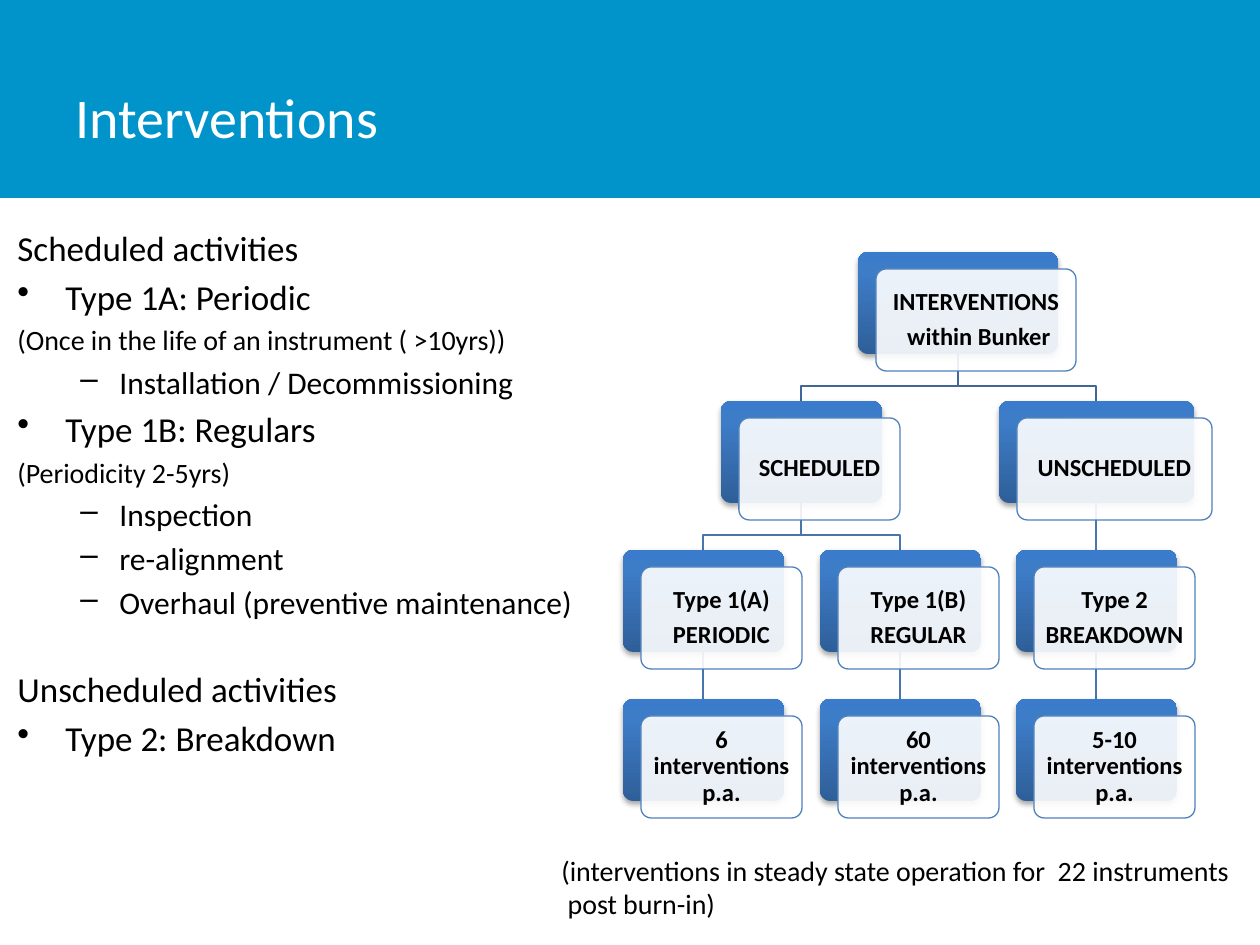
"""Build the Interventions slide with its activity list and breakdown tree."""
from copy import deepcopy
from dataclasses import dataclass
from typing import Optional

from lxml import etree
from pptx import Presentation
from pptx import util as u
from pptx.dml.color import RGBColor
from pptx.enum import shapes, text
from pptx.oxml.ns import qn

EMU_PER_PX = 914400 / 126
FONT = "Calibri"
BLACK = RGBColor(0x00, 0x00, 0x00)
WHITE = RGBColor(0xFF, 0xFF, 0xFF)
BANNER_BLUE = RGBColor(0x00, 0x94, 0xCA)
OUTLINE_BLUE = RGBColor(0x4F, 0x81, 0xBD)
UPPER_LINK = RGBColor(0x3F, 0x67, 0x97)
LOWER_LINK = RGBColor(0x48, 0x75, 0xAC)
CARD_GRADIENT = (
    (0, RGBColor(0x2F, 0x5F, 0x99)),
    (0.8, RGBColor(0x3D, 0x7C, 0xC7)),
    (1, RGBColor(0x3A, 0x7C, 0xCB)),
)

TREE_TOP, LEVEL_PITCH, CARD_HEIGHT = 252, 149, 102
FRONT_DX, FRONT_DY, TEXT_MARGIN, BEND_DROP = 18, 17, 3, 32


@dataclass(frozen=True)
class Item:
    wording: str
    size: int
    bullet: str = ""
    margin: int = 0
    hanging: int = 0
    before: Optional[float] = None


@dataclass(frozen=True)
class Card:
    lines: tuple[str, ...]
    level: int
    left: int
    width: int = 161
    parent: Optional["Card"] = None

    @property
    def top(self) -> int:
        return TREE_TOP + self.level * LEVEL_PITCH

    @property
    def centre(self) -> int:
        return self.left + self.width // 2


def px(length: float) -> u.Emu:
    """Turn pixels into EMU."""
    return u.Emu(round(length * EMU_PER_PX))


def heading(wording: str) -> Item:
    return Item(wording, 20)


def activity(wording: str) -> Item:
    return Item(wording, 20, "•", 48, 48)


def remark(wording: str) -> Item:
    return Item(wording, 16)


def task(wording: str) -> Item:
    return Item(wording, 18, "–", 102, 39)


ITEMS = (
    heading("Scheduled activities"),
    activity("Type 1A: Periodic"),
    remark("(Once in the life of an instrument ( >10yrs))"),
    task("Installation / Decommissioning"),
    activity("Type 1B: Regulars"),
    remark("(Periodicity 2-5yrs)"),
    task("Inspection"),
    task("re-alignment"),
    task("Overhaul (preventive maintenance)"),
    Item("Unscheduled activities", 20, before=26.7),
    activity("Type 2: Breakdown"),
)

ROOT = Card(("INTERVENTIONS", " within Bunker"), 0, 858, 200)
SCHEDULED = Card(("SCHEDULED",), 1, 721, parent=ROOT)
UNSCHEDULED = Card(("UNSCHEDULED",), 1, 999, 195, ROOT)
PERIODIC = Card(("Type 1(A)", "PERIODIC"), 2, 623, parent=SCHEDULED)
REGULAR = Card(("Type 1(B)", "REGULAR"), 2, 820, parent=SCHEDULED)
BREAKDOWN = Card(("Type 2", "BREAKDOWN"), 2, 1016, parent=UNSCHEDULED)
COUNTS = tuple(
    Card((f"{count} interventions p.a.",), 3, kind.left, parent=kind)
    for count, kind in (("6", PERIODIC), ("60", REGULAR), ("5-10", BREAKDOWN))
)
CARDS = (ROOT, SCHEDULED, PERIODIC, COUNTS[0], REGULAR, COUNTS[1],
         UNSCHEDULED, BREAKDOWN, COUNTS[2])


def add_text(canvas, frame: tuple[int, ...], lines, size: int, color=BLACK, bold=False):
    """Add a wrapping text box and style each of its paragraphs."""
    box = canvas.add_textbox(*map(px, frame))
    box.text_frame.word_wrap = True
    box.text_frame.text = "\n".join(lines)
    for para in box.text_frame.paragraphs:
        font = para.runs[0].font
        font.name, font.size, font.bold = FONT, u.Pt(size), bold
        font.color.rgb = color
    return box


def add_items(canvas, items: tuple[Item, ...]) -> None:
    """Write the activity list with its bullets and indents."""
    box = add_text(canvas, (5, 220, 650, 653), [item.wording for item in items], 20)
    for para, item in zip(box.text_frame.paragraphs, items):
        para.runs[0].font.size = u.Pt(item.size)
        before = item.size * 0.2 if item.before is None else item.before
        para.space_before = u.Pt(before)
        if item.bullet:
            properties = para._p.get_or_add_pPr()
            properties.set("marL", str(px(item.margin)))
            properties.set("indent", str(-px(item.hanging)))
            etree.SubElement(properties, qn("a:buChar"), char=item.bullet)


def add_link(canvas, card: Card) -> None:
    """Join a card to its parent, with a bend where they are not aligned."""
    start, end = card.parent.centre, card.centre
    bottom = card.parent.top + CARD_HEIGHT
    if start == end:
        link = canvas.add_connector(
            shapes.MSO_CONNECTOR.STRAIGHT, px(start), px(bottom), px(end), px(card.top))
        etree.SubElement(link._element.spPr, qn("a:effectLst"))
    else:
        bend = bottom + BEND_DROP
        outline = canvas.build_freeform(start, bottom, scale=EMU_PER_PX)
        outline.add_line_segments(
            [(start, bend), (end, bend), (end, card.top)], close=False)
        link = outline.convert_to_shape()
        link.fill.background()
        link.shadow.inherit = False
    link.line.color.rgb = UPPER_LINK if card.level == 1 else LOWER_LINK
    link.line.width = u.Pt(0.75)


def add_plate(canvas, left: int, top: int, width: int):
    """Add one rounded plate of a card."""
    plate = canvas.add_shape(shapes.MSO_SHAPE.ROUNDED_RECTANGLE,
                             px(left), px(top), px(width), px(CARD_HEIGHT))
    plate.adjustments[0] = 0.1
    plate.shadow.inherit = False
    return plate


def add_card(canvas, card: Card) -> None:
    """Draw the shaded back plate, the pale front plate and the label."""
    back = add_plate(canvas, card.left, card.top, card.width)
    back.line.fill.background()
    back.fill.gradient()
    back.fill.gradient_angle = 90
    stops = back._element.spPr.find(".//" + qn("a:gsLst"))
    stops.append(deepcopy(stops[-1]))
    for stop, (position, color) in zip(back.fill.gradient_stops, CARD_GRADIENT):
        stop.position, stop.color.rgb = position, color
    effects = back._element.spPr.find(qn("a:effectLst"))
    shadow = etree.SubElement(effects, qn("a:outerShdw"), blurRad="40000",
                              dist="23000", dir="5400000", rotWithShape="0")
    shade = etree.SubElement(shadow, qn("a:srgbClr"), val=str(BLACK))
    etree.SubElement(shade, qn("a:alpha"), val="35000")

    left, top = card.left + FRONT_DX, card.top + FRONT_DY
    front = add_plate(canvas, left, top, card.width)
    front.fill.solid()
    front.fill.fore_color.rgb = WHITE
    tint = front._element.spPr.find(qn("a:solidFill"))[0]
    etree.SubElement(tint, qn("a:alpha"), val="90000")
    front.line.color.rgb, front.line.width = OUTLINE_BLUE, u.Pt(0.75)

    frame = (left + TEXT_MARGIN, top + TEXT_MARGIN,
             card.width - 2 * TEXT_MARGIN, CARD_HEIGHT - 2 * TEXT_MARGIN)
    label = add_text(canvas, frame, card.lines, 14, bold=True).text_frame
    label.vertical_anchor = text.MSO_ANCHOR.MIDDLE
    label.margin_left = label.margin_right = u.Inches(0.06)
    label.margin_top = label.margin_bottom = u.Inches(0.06)
    for para in label.paragraphs:
        para.alignment = text.PP_ALIGN.CENTER
        para.line_spacing, para.space_after = 0.9, u.Pt(4.9)


def main() -> None:
    """Assemble and save the deck."""
    deck = Presentation()
    deck.slide_width, deck.slide_height = px(1260), px(945)
    page = deck.slides.add_slide(deck.slide_layouts[6])
    banner = page.shapes.add_shape(
        shapes.MSO_SHAPE.RECTANGLE, 0, 0, px(1260), px(198))
    banner.shadow.inherit = False
    banner.fill.solid()
    banner.fill.fore_color.rgb = BANNER_BLUE
    banner.line.fill.background()
    title = add_text(page.shapes, (63, 38, 984, 157), ["Interventions"], 32, WHITE)
    title.text_frame.vertical_anchor = text.MSO_ANCHOR.MIDDLE
    add_items(page.shapes, ITEMS)
    tree = page.shapes.add_group_shape().shapes
    for card in CARDS:
        if card.parent:
            add_link(tree, card)
    for card in CARDS:
        add_card(tree, card)
    note = add_text(page.shapes, (549, 847, 707, 81), [
        "(interventions in steady state operation for  22 instruments",
        " post burn-in)"], 16)
    note.text_frame.word_wrap = False
    deck.save("out.pptx")


if __name__ == "__main__":
    main()
